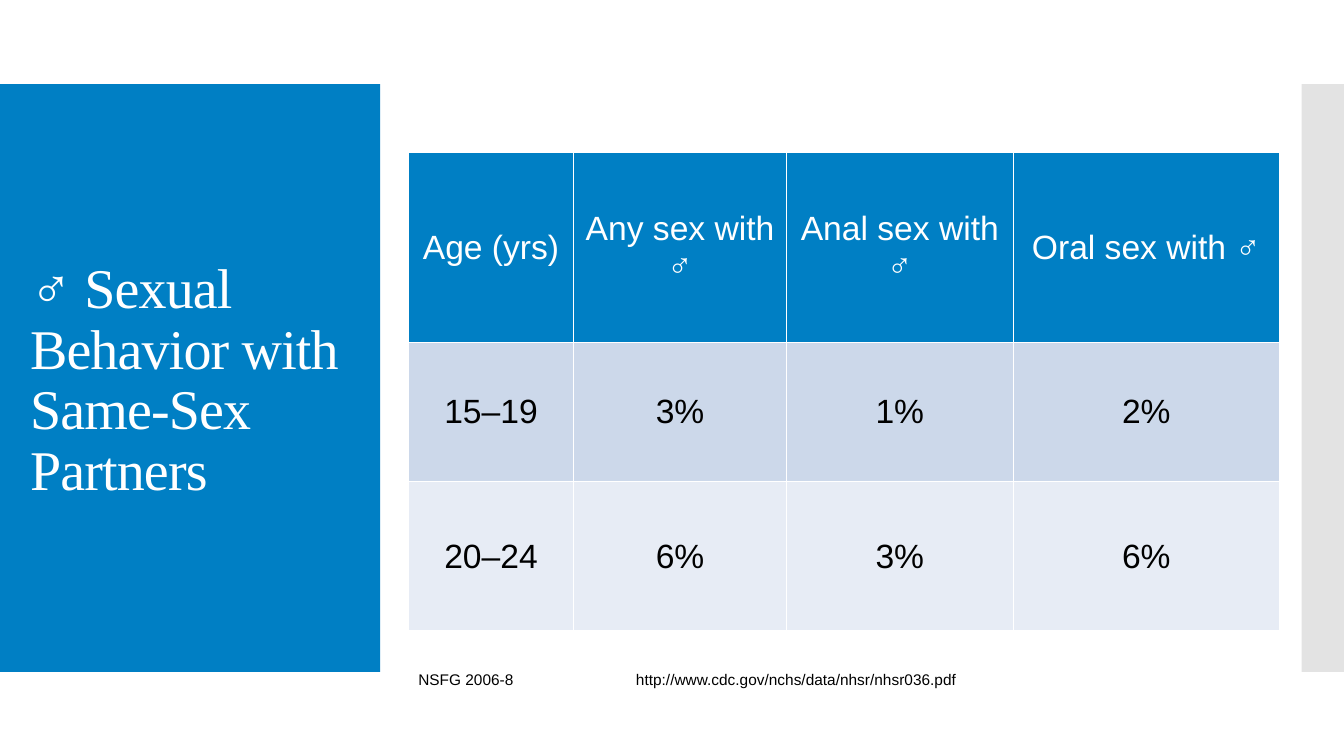
import dataclasses

import pptx
import pptx.dml.color
import pptx.enum.shapes
import pptx.enum.text
import pptx.oxml
import pptx.oxml.ns
import pptx.util

TITLE = "♂ Sexual Behavior with Same-Sex Partners"
ROWS = [
    ("Age (yrs)", "Any sex with ♂", "Anal sex with ♂", "Oral sex with ♂"),
    ("15–19", "3%", "1%", "2%"),
    ("20–24", "6%", "3%", "6%"),
]
SURVEY = "NSFG 2006-8"
SOURCE = "http://www.cdc.gov/nchs/data/nhsr/nhsr036.pdf"

# Lengths in inches
SLIDE_WIDTH, SLIDE_HEIGHT = 13.33, 7.5
BAND_TOP, BAND_HEIGHT = SLIDE_HEIGHT / 9, SLIDE_HEIGHT * 7 / 9
PANEL_WIDTH, STRIP_WIDTH = 3.77, 0.42
CONTENT_LEFT, TABLE_TOP, FOOTER_TOP = 4.05, 1.51, 6.6
COLUMN_WIDTHS = (1.64, 2.11, 2.25, 2.64)
ROW_HEIGHTS = (1.89, 1.38, 1.48)
CELL_MARGINS = (0.11, 0.04, 0.11, 0.04)


@dataclasses.dataclass(frozen=True)
class Theme:
    blue: str = "007FC4"
    grey: str = "C8C8C8"
    white: str = "FFFFFF"
    black: str = "000000"
    row_fills: tuple = ("007FC4", "CCD8EA", "E7ECF5")
    heading_font: str = "Times New Roman"
    body_font: str = "Arial"
    title_size: int = 40
    table_size: int = 24
    footer_size: int = 11


THEME = Theme()


def rgb(color):
    return pptx.dml.color.RGBColor.from_string(color)


def write_text(frame, text, *, size, color, font=THEME.body_font, align=None,
               anchor=None, line_spacing=None, tracking=None):
    frame.vertical_anchor = anchor
    paragraph = frame.paragraphs[0]
    paragraph.alignment = align
    paragraph.line_spacing = line_spacing
    run = paragraph.add_run()
    run.text = text
    run.font.size = pptx.util.Pt(size)
    run.font.name = font
    run.font.color.rgb = rgb(color)
    if tracking is not None:
        run.font._element.set("spc", str(round(tracking * 100)))


def add_band(slide, left, width, color, opacity=None):
    """Add a full-height side band, optionally translucent."""
    band = slide.shapes.add_shape(
        pptx.enum.shapes.MSO_SHAPE.RECTANGLE,
        *map(pptx.util.Inches, (left, BAND_TOP, width, BAND_HEIGHT)))
    band.shadow.inherit = False
    band.fill.solid()
    band.fill.fore_color.rgb = rgb(color)
    band.line.fill.background()
    if opacity is not None:
        color_element = band._element.spPr.find(".//" + pptx.oxml.ns.qn("a:srgbClr"))
        alpha = pptx.oxml.parse_xml(
            f'<a:alpha {pptx.oxml.ns.nsdecls("a")} val="{opacity * 1000}"/>')
        color_element.append(alpha)


def add_text_box(slide, text, left, top, width, height, *, wrap=False, **style):
    box = slide.shapes.add_textbox(*map(pptx.util.Inches, (left, top, width, height)))
    box.text_frame.word_wrap = wrap
    write_text(box.text_frame, text, **style)


def set_borders(cell, color, width=1):
    """Draw all four sides; they must precede the fill in the cell properties."""
    properties = cell._tc.get_or_add_tcPr()
    for index, side in enumerate(("lnL", "lnR", "lnT", "lnB")):
        properties.insert(index, pptx.oxml.parse_xml(
            f'<a:{side} {pptx.oxml.ns.nsdecls("a")} w="{pptx.util.Pt(width)}">'
            f'<a:solidFill><a:srgbClr val="{color}"/></a:solidFill></a:{side}>'))


def add_behavior_table(slide):
    table = slide.shapes.add_table(
        len(ROWS), len(COLUMN_WIDTHS),
        *map(pptx.util.Inches, (CONTENT_LEFT, TABLE_TOP,
                                sum(COLUMN_WIDTHS), sum(ROW_HEIGHTS)))).table
    for column, width in zip(table.columns, COLUMN_WIDTHS):
        column.width = pptx.util.Inches(width)
    for row_index, (row, height) in enumerate(zip(table.rows, ROW_HEIGHTS)):
        row.height = pptx.util.Inches(height)
        for cell, text in zip(row.cells, ROWS[row_index]):
            (cell.margin_left, cell.margin_top, cell.margin_right,
             cell.margin_bottom) = map(pptx.util.Inches, CELL_MARGINS)
            cell.vertical_anchor = pptx.enum.text.MSO_ANCHOR.MIDDLE
            cell.fill.solid()
            cell.fill.fore_color.rgb = rgb(THEME.row_fills[row_index])
            set_borders(cell, THEME.white)
            write_text(cell.text_frame, text, size=THEME.table_size,
                       color=THEME.black if row_index else THEME.white,
                       align=pptx.enum.text.PP_ALIGN.CENTER)


def main():
    presentation = pptx.Presentation()
    presentation.slide_width = pptx.util.Inches(SLIDE_WIDTH)
    presentation.slide_height = pptx.util.Inches(SLIDE_HEIGHT)
    slide = presentation.slides.add_slide(presentation.slide_layouts[6])

    add_band(slide, 0, PANEL_WIDTH, THEME.blue)
    add_band(slide, SLIDE_WIDTH - STRIP_WIDTH, STRIP_WIDTH, THEME.grey, opacity=50)
    add_text_box(slide, TITLE, 0.2, 1.27, 3.5, 5.03, wrap=True,
                 size=THEME.title_size, color=THEME.white, font=THEME.heading_font,
                 anchor=pptx.enum.text.MSO_ANCHOR.MIDDLE, line_spacing=0.9,
                 tracking=-0.6)
    add_behavior_table(slide)
    for text, left, width in ((SOURCE, 6.21, 3.4), (SURVEY, CONTENT_LEFT, 1.15)):
        add_text_box(slide, text, left, FOOTER_TOP, width, 0.29,
                     size=THEME.footer_size, color=THEME.black)
    presentation.save("out.pptx")


if __name__ == "__main__":
    main()
